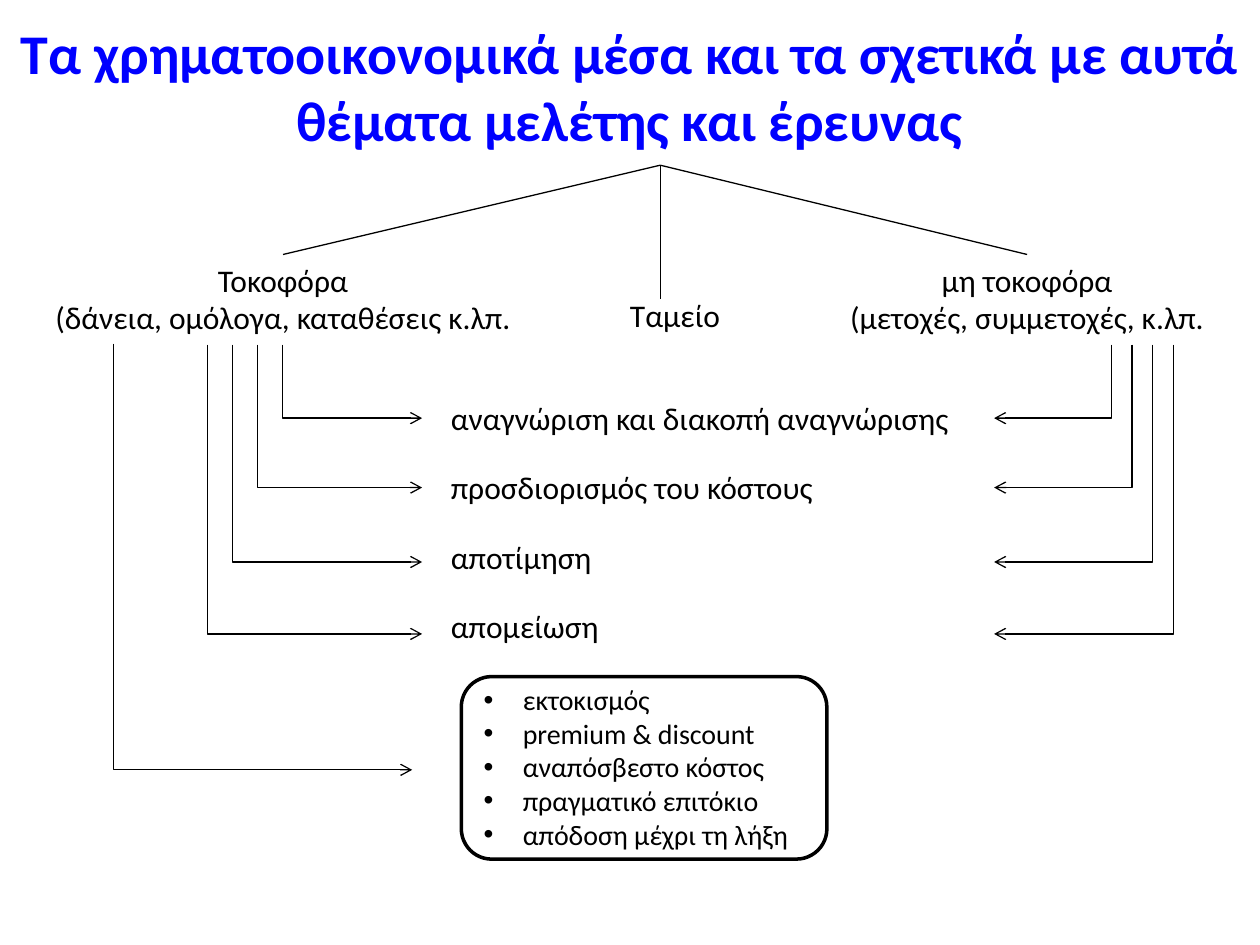
from lxml import etree
from pptx import Presentation
from pptx.dml.color import RGBColor
from pptx.enum import shapes, text
from pptx.oxml.ns import qn
from pptx.util import Cm, Pt

BLACK = RGBColor(0, 0, 0)
BLUE = RGBColor(0, 0, 255)
FONT = "Calibri"
LEFT, CENTER = text.PP_ALIGN.LEFT, text.PP_ALIGN.CENTER
ISSUES = [
    ("αναγνώριση και διακοπή αναγνώρισης", 11.43),
    ("προσδιορισμός του κόστους", 8.51),
    ("αποτίμηση", 3.53),
    ("απομείωση", 3.71),
]
ARROW_YS = [8.43, 9.83, 11.33, 12.78]
TOPICS = [
    "εκτοκισμός",
    "premium & discount",
    "αναπόσβεστο κόστος",
    "πραγματικό επιτόκιο",
    "απόδοση μέχρι τη λήξη",
]


def add_text(slide, box, lines, size=18, align=LEFT, color=BLACK, bold=False, wrap=False):
    sp = slide.shapes.add_textbox(*map(Cm, box))
    tf = sp.text_frame
    tf.word_wrap = wrap
    for i, line in enumerate(lines):
        p = tf.paragraphs[0] if i == 0 else tf.add_paragraph()
        p.text = line
        p.alignment = align
        p.font.name, p.font.size, p.font.bold = FONT, Pt(size), bold
        p.font.color.rgb = color
    return sp


def style_line(sp, arrow=False):
    sp.line.color.rgb = BLACK
    sp.line.width = Pt(0.75)
    if arrow:
        etree.SubElement(sp.line._get_or_add_ln(), qn("a:tailEnd"), type="arrow")
    etree.SubElement(sp._element.spPr, qn("a:effectLst"))


def add_elbow(parent, x1, y1, x2, y2):
    rightward = x2 > x1
    cx, cy = (x1 + x2) / 2, (y1 + y2) / 2
    half_w, half_h = (y2 - y1) / 2, abs(x2 - x1) / 2
    if rightward:
        half_w = -half_w
    sp = parent.add_connector(
        shapes.MSO_CONNECTOR.ELBOW,
        Cm(cx - half_w), Cm(cy - half_h), Cm(cx + half_w), Cm(cy + half_h),
    )
    spPr = sp._element.spPr
    spPr.find(qn("a:xfrm")).set("rot", "16200000" if rightward else "5400000")
    spPr.find(qn("a:prstGeom")).set("prst", "bentConnector2")
    style_line(sp, arrow=True)


def add_title(slide, box):
    title = "Τα χρηματοοικονομικά μέσα και τα σχετικά με αυτά θέματα μελέτης και έρευνας"
    sp = add_text(slide, box, [title], 32, CENTER, BLUE, True, True)
    sp.text_frame.vertical_anchor = text.MSO_ANCHOR.MIDDLE


def add_categories(slide, box):
    x, y, w, h = box
    interest = add_text(slide, (x, y + 1.8, 10.39, 1.8),
                        ["Τοκοφόρα\n(δάνεια, ομόλογα, καταθέσεις κ.λπ."], align=CENTER)
    add_text(slide, (x + 11.94, y + 2.51, 2.36, 1.02), ["Ταμείο"])
    other = add_text(slide, (x + w - 8.33, y + 1.8, 8.33, 1.8),
                     ["μη τοκοφόρα\n(μετοχές, συμμετοχές, κ.λπ."], align=CENTER)
    apex_x = x + 12.8
    for target in (interest, other, None):
        sp = slide.shapes.add_connector(
            shapes.MSO_CONNECTOR.STRAIGHT, Cm(apex_x), Cm(y), Cm(apex_x), Cm(y + 2.69))
        if target is not None:
            sp.end_connect(target, 0)
        style_line(sp)


def add_issues(slide, box):
    x, y, w, h = box
    for i, (issue, width) in enumerate(ISSUES):
        add_text(slide, (x, y + i * h / len(ISSUES), width, 1.02), [issue])


def add_arrows(slide, box, first_x, step, end_x):
    x, y, w, h = box
    group = slide.shapes.add_group_shape().shapes
    for i, arrow_y in enumerate(ARROW_YS):
        add_elbow(group, x + first_x + i * step, y, x + end_x, arrow_y)


def add_topics(slide, box):
    x, y, w, h = box
    sp = add_text(slide, (x + 0.2, y, w - 0.18, h), TOPICS, 16)
    for p in sp.text_frame.paragraphs:
        pPr = p._p.get_or_add_pPr()
        pPr.set("marL", str(Cm(0.79)))
        pPr.set("indent", str(-Cm(0.79)))
        bullet = etree.Element(qn("a:buChar"), char="•")
        font = etree.Element(qn("a:buFont"), typeface="Arial")
        pPr.insert(0, font)
        pPr.insert(1, bullet)
    frame = slide.shapes.add_shape(shapes.MSO_SHAPE.ROUNDED_RECTANGLE, *map(Cm, box))
    frame.shadow.inherit = False
    frame.fill.background()
    frame.line.color.rgb = BLACK
    frame.line.width = Pt(2)


def main():
    prs = Presentation()
    prs.slide_width, prs.slide_height = Cm(25.4), Cm(19.05)
    slide = prs.slides.add_slide(prs.slide_layouts[6])
    add_title(slide, (0, 0.53, 25.4, 2.39))
    add_categories(slide, (0.51, 3.33, 24.36, 3.6))
    add_issues(slide, (8.84, 7.92, 11.43, 5.6))
    add_arrows(slide, (4.19, 6.95, 4.32, 5.83), 1.5, -0.5, 4.32)
    add_arrows(slide, (20.04, 6.95, 3.61, 5.83), 2.36, 0.42, 0)
    add_elbow(slide.shapes, 2.29, 6.93, 8.31, 15.52)
    add_topics(slide, (9.3, 13.64, 7.37, 3.68))
    prs.save("out.pptx")


if __name__ == "__main__":
    main()
